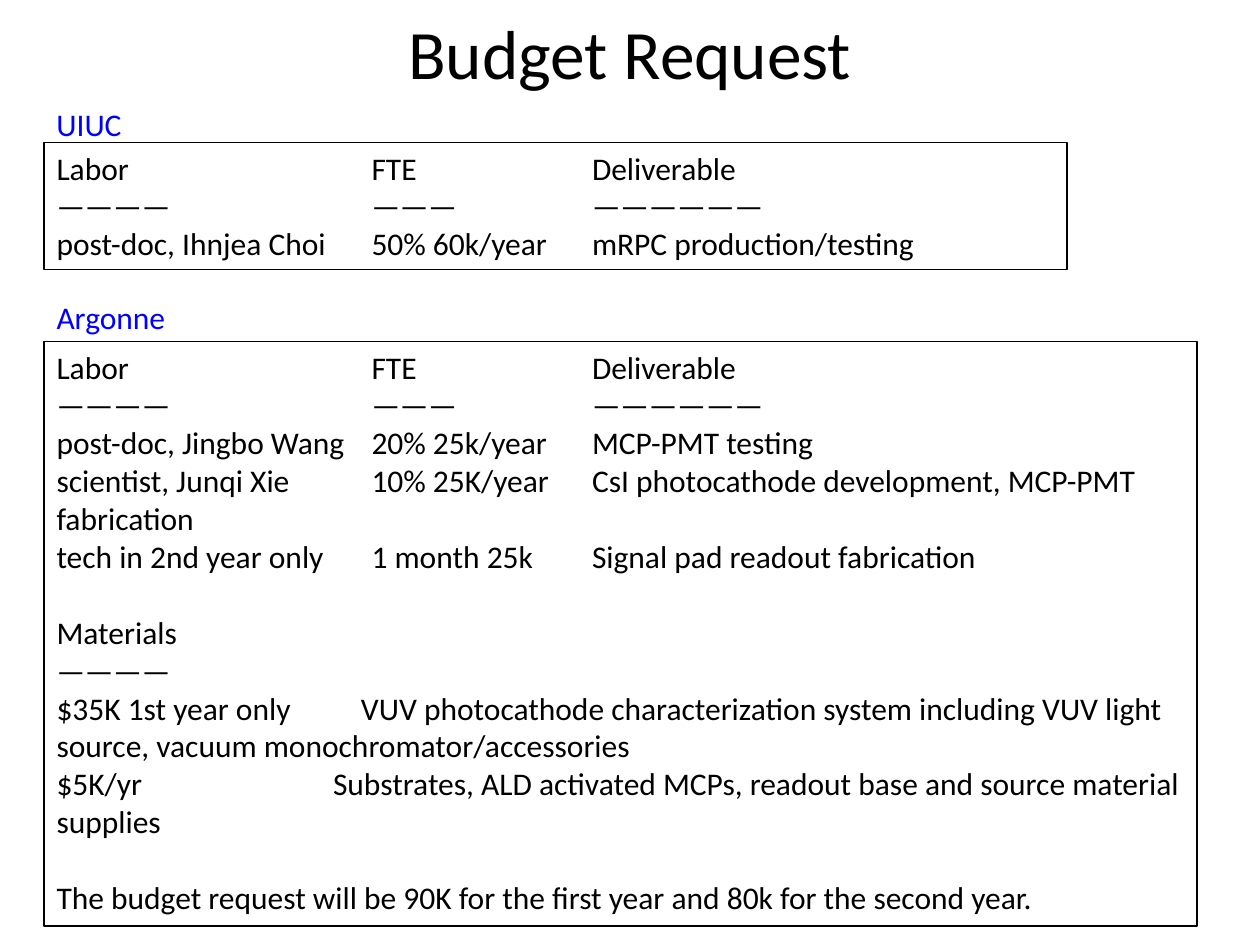
from lxml import etree
from pptx import Presentation
from pptx.dml.color import RGBColor
from pptx.enum.shapes import MSO_SHAPE as Shape
from pptx.enum.text import MSO_ANCHOR as Anchor, MSO_AUTO_SIZE as AutoSize, PP_ALIGN as Align
from pptx.oxml.ns import qn
from pptx.util import Pt

LEFT = 25.2
LABOR_STOPS = (180, 306)
HEADING = [
    ("Labor\tFTE\tDeliverable", LABOR_STOPS, 0),
    ("————\t———\t——————", LABOR_STOPS, 0),
]
UIUC_ROWS = HEADING + [
    ("post-doc, Ihnjea Choi\t50% 60k/year\tmRPC production/testing", LABOR_STOPS, 0),
]
ARGONNE_ROWS = HEADING + [
    ("post-doc, Jingbo Wang\t20% 25k/year\tMCP-PMT testing", LABOR_STOPS, 0),
    ("scientist, Junqi Xie\t10% 25K/year\tCsI photocathode development, MCP-PMT fabrication", LABOR_STOPS, 0),
    ("tech in 2nd year only\t1 month 25k\tSignal pad readout fabrication", LABOR_STOPS, 0),
    ("Materials", (), 22),
    ("————", (), 0),
    ("$35K 1st year only\tVUV photocathode characterization system including VUV light source, "
     "vacuum monochromator/accessories", (174,), 0),
    ("$5K/yr\tSubstrates, ALD activated MCPs, readout base and source material supplies", (158,), 0),
    ("The budget request will be 90K for the first year and 80k for the second year.", (), 22),
]


def color(value):
    return RGBColor.from_string(value)


class BudgetSlide:
    font = "Calibri"
    size = 18
    ink = "000000"
    accent = "0000FF"

    def __init__(self, deck):
        self.slide = deck.slides.add_slide(deck.slide_layouts[5])

    def add_span(self, para, text, size=None, ink=None):
        span = para.add_run()
        span.text = text
        span.font.name = self.font
        span.font.size = Pt(size or self.size)
        span.font.color.rgb = color(ink or self.ink)

    def title(self, text, left, top, width, height):
        box = self.slide.shapes.title
        box.left, box.top, box.width, box.height = map(Pt, (left, top, width, height))
        frame = box.text_frame
        frame.auto_size = AutoSize.NONE
        frame.vertical_anchor = Anchor.MIDDLE
        para = frame.paragraphs[0]
        para.alignment = Align.CENTER
        self.add_span(para, text, size=39.6)

    def label(self, text, left, top, width, height):
        box = self.slide.shapes.add_textbox(*map(Pt, (left, top, width, height)))
        frame = box.text_frame
        frame.word_wrap = False
        frame.auto_size = AutoSize.SHAPE_TO_FIT_TEXT
        self.add_span(frame.paragraphs[0], text, ink=self.accent)

    def tab_stops(self, para, stops):
        tabs = etree.SubElement(para._p.get_or_add_pPr(), qn("a:tabLst"))
        for stop in stops:
            etree.SubElement(tabs, qn("a:tab"), pos=str(Pt(stop)), algn="l")

    def panel(self, rows, left, top, width, height):
        box = self.slide.shapes.add_shape(Shape.RECTANGLE, *map(Pt, (left, top, width, height)))
        box.shadow.inherit = False
        box.fill.background()
        box.line.color.rgb = color(self.ink)
        box.line.width = Pt(0.75)
        frame = box.text_frame
        frame.word_wrap = True
        frame.auto_size = AutoSize.SHAPE_TO_FIT_TEXT
        frame.vertical_anchor = Anchor.TOP
        for index, (text, stops, gap) in enumerate(rows):
            para = frame.add_paragraph() if index else frame.paragraphs[0]
            para.alignment = Align.LEFT
            para.space_before = Pt(gap)
            if stops:
                self.tab_stops(para, stops)
            self.add_span(para, text)


def main():
    deck = Presentation()
    deck.slide_width, deck.slide_height = Pt(720), Pt(540)
    budget = BudgetSlide(deck)
    budget.title("Budget Request", 36, 4.3, 648, 51)
    budget.panel(ARGONNE_ROWS, LEFT, 195.1, 658.8, 334)
    budget.panel(UIUC_ROWS, LEFT, 81.4, 584.6, 72.7)
    budget.label("UIUC", LEFT, 56.2, 52.6, 29)
    budget.label("Argonne", LEFT, 167, 77.8, 29)
    deck.save("out.pptx")


if __name__ == "__main__":
    main()
